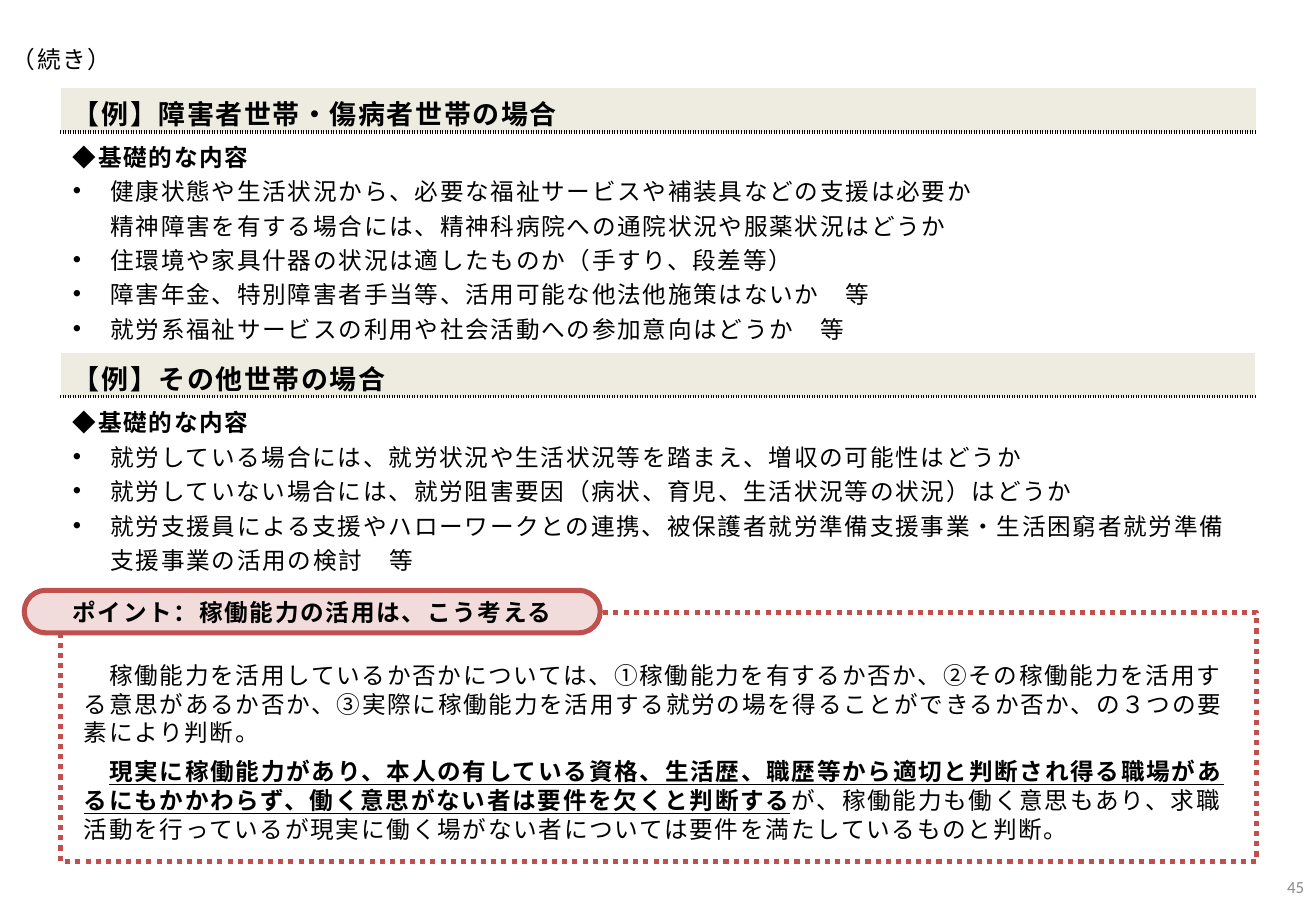
from lxml.etree import SubElement as Sub
from pptx import Presentation
from pptx.dml.color import RGBColor
from pptx.enum.dml import MSO_LINE as Dash
from pptx.enum.shapes import MSO_SHAPE as Kind
from pptx.enum.text import MSO_ANCHOR as Anchor, MSO_AUTO_SIZE as Fit, PP_ALIGN as Align
from pptx.oxml.ns import qn
from pptx.util import Inches, Pt

FONT = "Noto Sans CJK JP"
RED = "C0504D"


def tint(color, value):
    color.rgb = RGBColor.from_string(value)


def write(para, text, size=14, bold=False, line=False, font=FONT, color="000000", gap=100):
    """Add text to a paragraph; a newline becomes a line break."""
    for i, part in enumerate(text.split("\n")):
        if i:
            para.add_line_break()
        run = para.add_run()
        run.text = part
        run.font.size, run.font.bold, run.font.underline = Pt(size), bold, line
        run.font.name = font
        tint(run.font.color, color)
        props = run.font._element
        props.set("spc", str(gap))
        Sub(props, qn("a:ea"), typeface=font)


deck = Presentation()
deck.slide_width, deck.slide_height = Inches(10.83), Inches(7.5)
slide = deck.slides.add_slide(deck.slide_layouts[6])
shapes = slide.shapes

# Page number
box = shapes.add_textbox(Inches(10.42), Inches(7.1), Inches(0.41), Inches(0.4))
page = box.text_frame
page.word_wrap = True
page.vertical_anchor = Anchor.MIDDLE
page.paragraphs[0].alignment = Align.RIGHT
write(page.paragraphs[0], "45", size=10, font="Calibri", color="898989", gap=0)

# Example tables: top, width, row heights, heading, points
cases = [
    (0.72, 9.84, (0.32, 1.81), "【例】障害者世帯・傷病者世帯の場合", [
        "健康状態や生活状況から、必要な福祉サービスや補装具などの支援は必要か\n"
        "精神障害を有する場合には、精神科病院への通院状況や服薬状況はどうか",
        "住環境や家具什器の状況は適したものか（手すり、段差等）",
        "障害年金、特別障害者手当等、活用可能な他法他施策はないか　等",
        "就労系福祉サービスの利用や社会活動への参加意向はどうか　等",
    ]),
    (2.9, 9.83, (0.34, 1.54), "【例】その他世帯の場合　", [
        "就労している場合には、就労状況や生活状況等を踏まえ、増収の可能性はどうか",
        "就労していない場合には、就労阻害要因（病状、育児、生活状況等の状況）はどうか",
        "就労支援員による支援やハローワークとの連携、被保護者就労準備支援事業・"
        "生活困窮者就労準備支援事業の活用の検討　等",
    ]),
]
for top, width, rows, head, points in cases:
    table = shapes.add_table(2, 1, Inches(0.5), Inches(top), Inches(width),
                             Inches(sum(rows))).table
    table.horz_banding = False
    for i, dotted in enumerate(("lnB", "lnT")):
        table.rows[i].height = Inches(rows[i])
        cell = table.cell(i, 0)
        cell.vertical_anchor = Anchor.MIDDLE
        props = cell._tc.get_or_add_tcPr()
        for side in ("lnL", "lnR", "lnT", "lnB"):
            dots = side == dotted
            edge = Sub(props, qn("a:" + side), w=str(Pt(2.25 if dots else 1)))
            fill = Sub(edge, qn("a:solidFill"))
            Sub(fill, qn("a:srgbClr"), val="000000" if dots else "FFFFFF")
            Sub(edge, qn("a:prstDash"), val="sysDot" if dots else "solid")
    title, body = table.cell(0, 0), table.cell(1, 0)
    title.fill.solid()
    tint(title.fill.fore_color, "EEECE1")
    body.fill.background()
    write(title.text_frame.paragraphs[0], head, size=16, bold=True)
    write(body.text_frame.paragraphs[0], "◆基礎的な内容", bold=True)
    for point in points:
        para = body.text_frame.add_paragraph()
        props = para._p.get_or_add_pPr()
        props.set("marL", str(Inches(0.31)))
        props.set("indent", str(Inches(-0.31)))
        Sub(props, qn("a:buFont"), typeface="Arial")
        Sub(props, qn("a:buChar"), char="•")
        write(para, point)

# Explanation
box = shapes.add_textbox(Inches(0.59), Inches(5.39), Inches(9.65), Inches(1.6))
note = box.text_frame
note.word_wrap = True
note.auto_size = Fit.SHAPE_TO_FIT_TEXT
first, second = note.paragraphs[0], note.add_paragraph()
for para in (first, second):
    para.space_before = Pt(6)
    para.line_spacing = Pt(17)
write(first, "　稼働能力を活用しているか否かについては、①稼働能力を有するか否か、"
      "②その稼働能力を活用する意思があるか否か、③実際に稼働能力を活用する就労の場を"
      "得ることができるか否か、の３つの要素により判断。")
write(second, "　")
write(second, "現実に稼働能力があり、本人の有している資格、生活歴、職歴等から適切と判断され得る"
      "職場があるにもかかわらず、働く意思がない者は要件を欠くと判断する", bold=True, line=True)
write(second, "が、稼働能力も働く意思もあり、求職活動を行っているが現実に働く場がない者については"
      "要件を満たしているものと判断。　")

# Continuation mark
box = shapes.add_textbox(Inches(0), Inches(0.32), Inches(2.2), Inches(0.39))
mark = box.text_frame
mark.word_wrap = True
mark.paragraphs[0].space_before = Pt(3)
write(mark.paragraphs[0], "（続き）")

# Dotted frame and its label
frame = shapes.add_shape(Kind.RECTANGLE, Inches(0.5), Inches(5.04), Inches(9.84), Inches(2.05))
frame.fill.background()
label = shapes.add_shape(Kind.ROUNDED_RECTANGLE, Inches(0.2), Inches(4.86),
                         Inches(4.74), Inches(0.35))
label.adjustments[0] = 0.5
label.fill.solid()
tint(label.fill.fore_color, "F2DCDB")
for shape in (frame, label):
    shape.shadow.inherit = False
    shape.line.width = Pt(3)
    tint(shape.line.color, RED)
frame.line.dash_style = Dash.ROUND_DOT
point = label.text_frame
point.word_wrap = True
point.vertical_anchor = Anchor.MIDDLE
point.margin_left = point.margin_right = Inches(0.08)
point.margin_top = point.margin_bottom = Inches(0.12)
point.paragraphs[0].alignment = Align.CENTER
write(point.paragraphs[0], "ポイント：稼働能力の活用は、こう考える", bold=True)

deck.save("out.pptx")
